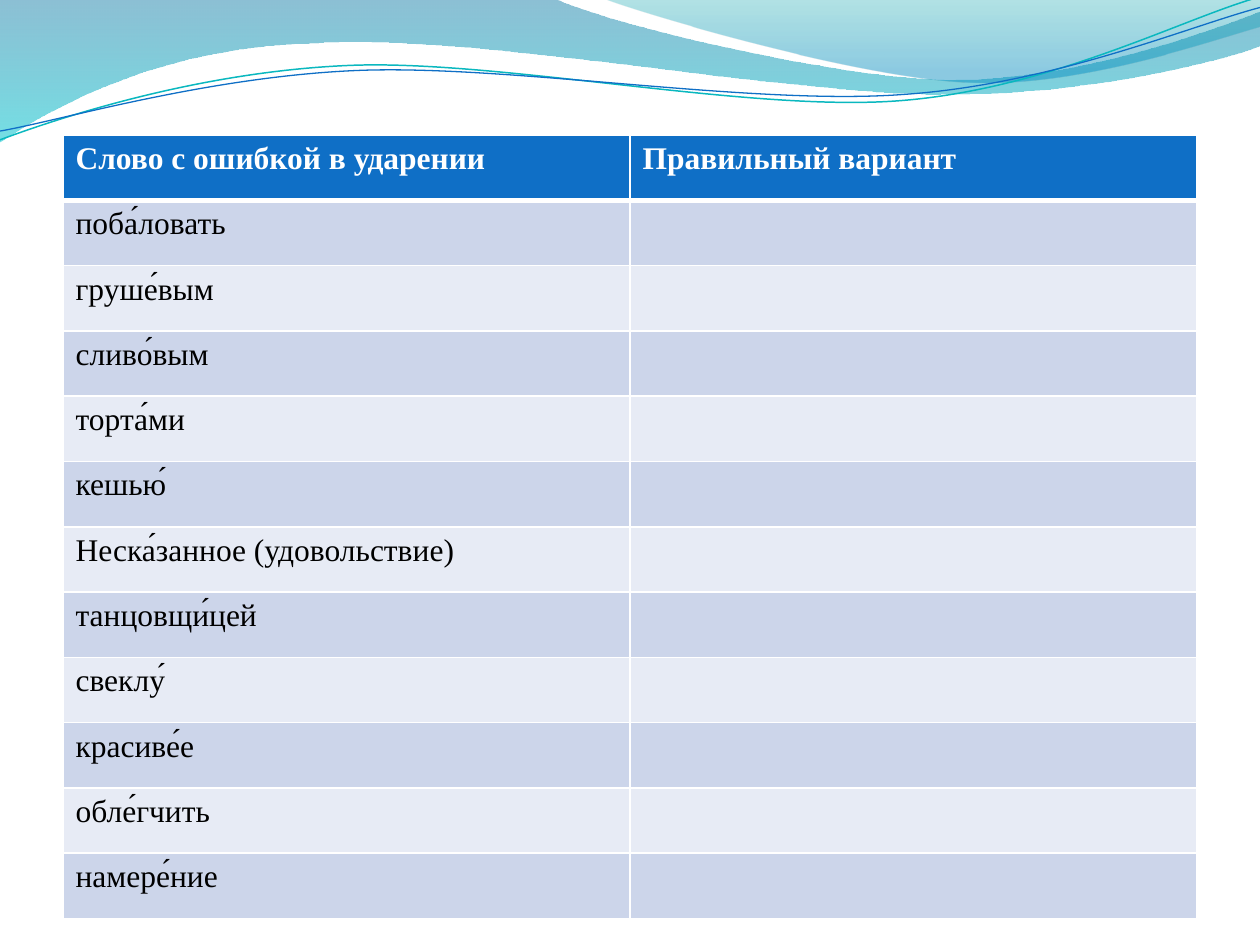
import math

import pptx
import pptx.dml.color
import pptx.oxml
import pptx.oxml.ns
import pptx.util

Pt = pptx.util.Pt
RGBColor = pptx.dml.color.RGBColor
qn = pptx.oxml.ns.qn
DRAWING_NS = pptx.oxml.ns.nsdecls("a")

WHITE = RGBColor(0xFF, 0xFF, 0xFF)
BLACK = RGBColor(0, 0, 0)
HEADER_BLUE = RGBColor(0x0F, 0x6F, 0xC6)
BAND_DARK = RGBColor(0xCC, 0xD5, 0xEA)
BAND_LIGHT = RGBColor(0xE7, 0xEB, 0xF5)
OCEAN = RGBColor(0x00, 0x74, 0xA1)
TURQUOISE = RGBColor(0x00, 0xC6, 0xCF)
TEAL = RGBColor(0x00, 0xA1, 0xA9)
AZURE = RGBColor(0x00, 0x8B, 0xBF)
THREAD_TEAL = RGBColor(0x0A, 0xB8, 0xBF)

# Content
HEADINGS = ["Слово с ошибкой в ударении", "Правильный вариант"]
WORDS = [
    "поба́ловать", "груше́вым", "сливо́вым", "торта́ми", "кешью́",
    "Неска́занное (удовольствие)", "танцовщи́цей", "свеклу́",
    "красиве́е", "обле́гчить", "намере́ние",
]

# Outlines in points: a pair is a corner, a six-number tuple is a Bezier curve
WAVES = [
    {"outline": [(0, 0), (317, -0.7),
                 (342.7, 12.2, 478, 45.4, 545.8, 45.4),
                 (614.2, 45.4, 689.8, 18.7, 720, 6.5), (720.7, 25.9),
                 (707.8, 31.7, 626.4, 54.7, 537.1, 54),
                 (447.8, 54, 275, 20.2, 185, 24.5),
                 (92.9, 25.9, 33.1, 59.8, -0.7, 81.4), (0, 0)],
     "stops": [(0, OCEAN, 45), (1, TURQUOISE, 55)]},
    {"outline": [(344.9, -0.7),
                 (366.5, 7.9, 491, 44.6, 553.7, 46.8),
                 (616.3, 49.7, 691.9, 23, 720, 15.1), (720, 0), (344.9, -0.7)],
     "stops": [(0, TEAL, 30), (0.8, AZURE, 45)]},
]
THREADS = [
    {"outline": [(0, 79.9),
                 (34.6, 67, 113.8, 41, 199.4, 37.4),
                 (284.4, 33.8, 427, 64.1, 513.4, 57.6),
                 (599.8, 51.1, 675.4, 10.8, 718.6, -1.4)],
     "center": (359.3, 41.4), "color": THREAD_TEAL, "width": 0.85},
    {"outline": [(0, 74.9),
                 (33.8, 69.1, 118.1, 43.9, 203.8, 40.3),
                 (290.2, 36.7, 429.8, 60.5, 516.2, 54),
                 (601.9, 48.2, 679, 15.1, 720, 4.3)],
     "center": (359.6, 42.5), "color": HEADER_BLUE, "width": 0.75},
]
THREAD_TILT = 2.7
TABLE_LEFT, TABLE_TOP, COLUMN_WIDTH, ROW_HEIGHT = 36, 77.2, 324, 37.33


def pairs(part):
    return list(zip(part[::2], part[1::2]))


def turn(part, center, degrees):
    """Turn the points of one outline part clockwise about a center."""
    cos, sin = math.cos(math.radians(degrees)), math.sin(math.radians(degrees))
    turned = []
    for x, y in pairs(part):
        dx, dy = x - center[0], y - center[1]
        turned += [center[0] + dx * cos - dy * sin, center[1] + dx * sin + dy * cos]
    return tuple(turned)


def draw_outline(slide, outline, close):
    start, *rest = [(Pt(x), Pt(y)) for part in outline for x, y in pairs(part)]
    builder = slide.shapes.build_freeform(*start)
    builder.add_line_segments(rest, close=close)
    shape = builder.convert_to_shape()
    shape.shadow.inherit = False

    # Join each group of three segments that belongs to a curve
    segments = iter(list(shape._element.spPr.iter(qn("a:lnTo"))))
    for part in outline[1:]:
        group = [next(segments) for _ in pairs(part)]
        if len(group) == 3:
            curve = pptx.oxml.parse_xml(f"<a:cubicBezTo {DRAWING_NS}/>")
            group[0].addprevious(curve)
            for segment in group:
                curve.append(segment[0])
                segment.getparent().remove(segment)
    return shape


def draw_wave(slide, outline, stops):
    wave = draw_outline(slide, outline, True)
    wave.line.fill.background()
    wave.fill.gradient()
    wave.fill.gradient_angle = 270
    for stop, (position, color, _) in zip(wave.fill.gradient_stops, stops):
        stop.position = position
        stop.color.rgb = color
    for rgb, (_, _, opacity) in zip(wave._element.spPr.iter(qn("a:srgbClr")), stops):
        rgb.append(pptx.oxml.parse_xml(f'<a:alpha {DRAWING_NS} val="{opacity * 1000}"/>'))


def draw_thread(slide, outline, center, color, width):
    level = [turn(part, center, THREAD_TILT) for part in outline]
    thread = draw_outline(slide, level, False)
    thread.rotation = 360 - THREAD_TILT
    thread.fill.background()
    thread.line.color.rgb = color
    thread.line.width = Pt(width)


def set_borders(cell, widths):
    properties = cell._tc.get_or_add_tcPr()
    for index, (side, width) in enumerate(widths.items()):
        properties.insert(index, pptx.oxml.parse_xml(
            f'<a:ln{side} {DRAWING_NS} w="{Pt(width)}">'
            f'<a:solidFill><a:srgbClr val="{WHITE}"/></a:solidFill></a:ln{side}>'))


def draw_table(slide):
    rows = [HEADINGS] + [[word, ""] for word in WORDS]
    table = slide.shapes.add_table(
        len(rows), len(HEADINGS), Pt(TABLE_LEFT), Pt(TABLE_TOP),
        Pt(COLUMN_WIDTH * len(HEADINGS)), Pt(ROW_HEIGHT * len(rows))).table
    for row in table.rows:
        row.height = Pt(ROW_HEIGHT)
    for r, texts in enumerate(rows):
        is_header = r == 0
        fill = HEADER_BLUE if is_header else (BAND_LIGHT, BAND_DARK)[r % 2]
        font_format = {"name": "Times New Roman", "size": Pt(18), "bold": is_header}
        borders = {"L": 1, "R": 1, "T": 3 if r == 1 else 1, "B": 3 if is_header else 1}
        for c, text in enumerate(texts):
            cell = table.cell(r, c)
            cell.fill.solid()
            cell.fill.fore_color.rgb = fill
            set_borders(cell, borders)
            if not text:
                continue
            cell.text = text
            font = cell.text_frame.paragraphs[0].runs[0].font
            for attribute, value in font_format.items():
                setattr(font, attribute, value)
            font.color.rgb = WHITE if is_header else BLACK


def main():
    presentation = pptx.Presentation()
    presentation.slide_width, presentation.slide_height = Pt(720), Pt(540)
    slide = presentation.slides.add_slide(presentation.slide_layouts[6])

    # Decorative waves along the top
    for wave in WAVES:
        draw_wave(slide, **wave)
    for thread in THREADS:
        draw_thread(slide, **thread)

    # Exercise table
    draw_table(slide)
    presentation.save("out.pptx")


if __name__ == "__main__":
    main()
